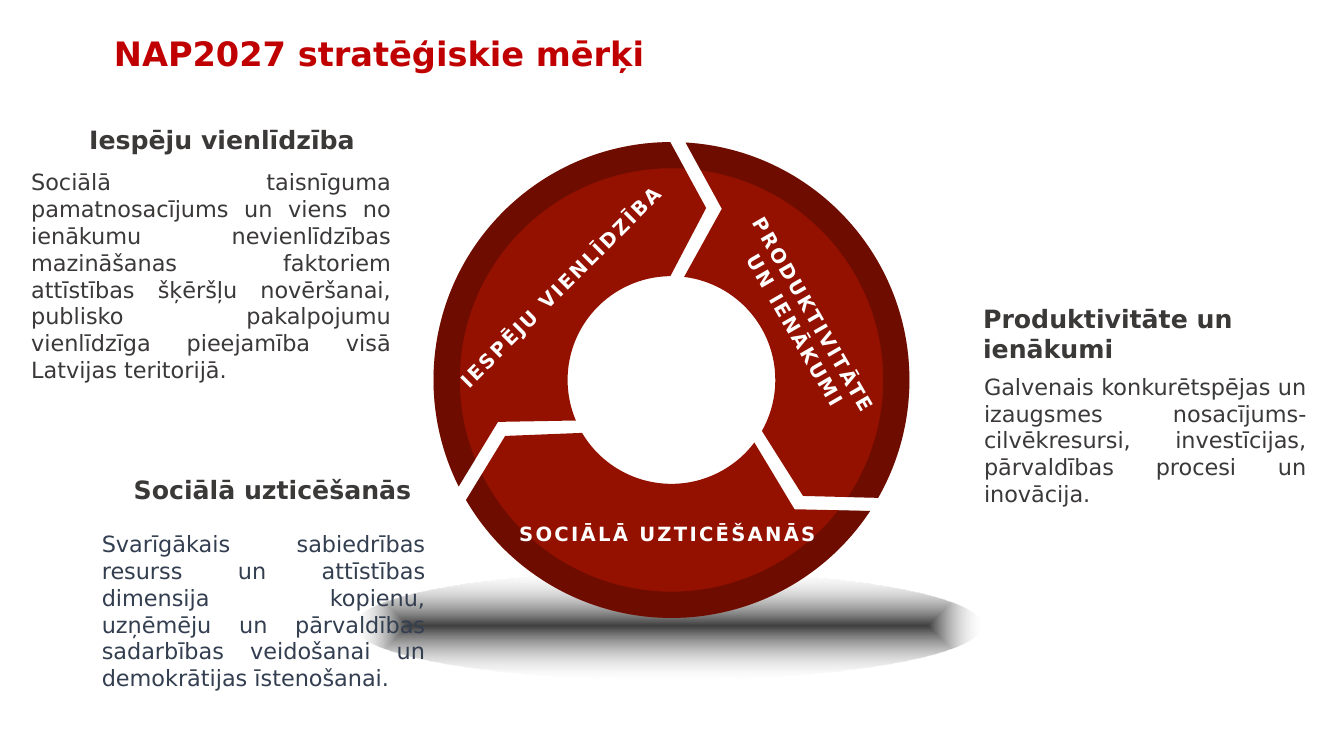
import math

from lxml import etree
from pptx import Presentation
from pptx import util as u
from pptx.dml.color import RGBColor
from pptx.enum import shapes, text
from pptx.oxml import parse_xml
from pptx.oxml.ns import nsdecls, qn

FONT = "DejaVu Sans"
GREY = "3B3838"
RED = "941100"
WHITE = "FFFFFF"
OUTER, RIM, INNER = 2.36, 2.1, 1.03


def rgb(value):
    """Return the colour for a hex string."""
    return RGBColor.from_string(value)


def add_run(p, words, size, color, bold=False, spacing=None):
    """Add one formatted run to a paragraph."""
    r = p.add_run()
    r.text = words
    r.font.name = FONT
    r.font.size = u.Pt(size)
    r.font.bold = bold
    r.font.color.rgb = rgb(color)
    if spacing:
        r._r.get_or_add_rPr().set("spc", str(round(spacing * 100)))


def add_box(parent, box, wrap=True):
    """Add a text box that grows with its text and return it."""
    sp = parent.shapes.add_textbox(*map(u.Inches, box))
    sp.text_frame.word_wrap = wrap
    sp.text_frame.auto_size = text.MSO_AUTO_SIZE.SHAPE_TO_FIT_TEXT
    return sp


def add_title(s, words, box):
    """Place the slide title."""
    sp = s.shapes.title
    sp.left, sp.top, sp.width, sp.height = map(u.Inches, box)
    tf = sp.text_frame
    tf.word_wrap = True
    tf.vertical_anchor = text.MSO_ANCHOR.TOP
    p = tf.paragraphs[0]
    p.alignment = text.PP_ALIGN.LEFT
    p.line_spacing = 0.9
    add_run(p, words, 24, "C00000", True)


def add_goal(s, heading, body, heading_box, body_box, align, color=GREY):
    """Add a grouped heading and justified description."""
    group = s.shapes.add_group_shape()
    parts = (
        (heading, heading_box, align, text.MSO_ANCHOR.BOTTOM, 18, GREY, True),
        (body, body_box, text.PP_ALIGN.JUSTIFY, text.MSO_ANCHOR.TOP, 16, color, False),
    )
    for words, box, alignment, anchor, size, ink, bold in parts:
        tf = add_box(group, box).text_frame
        tf.margin_left = tf.margin_right = 0
        tf.vertical_anchor = anchor
        p = tf.paragraphs[0]
        p.alignment = alignment
        add_run(p, words, size, ink, bold)


def add_shadow(s, box):
    """Add the soft ellipse under the wheel."""
    sp = s.shapes.add_shape(shapes.MSO_SHAPE.OVAL, *map(u.Inches, box))
    sp.shadow.inherit = False
    sp.line.fill.background()
    sp.fill.background()
    no_fill = sp._element.spPr.find(qn("a:noFill"))
    gradient = parse_xml(
        f'<a:gradFill {nsdecls("a")} rotWithShape="1"><a:gsLst>'
        '<a:gs pos="0"><a:srgbClr val="404040"/></a:gs>'
        '<a:gs pos="100000"><a:srgbClr val="E7E6E6"><a:alpha val="0"/></a:srgbClr></a:gs>'
        '</a:gsLst><a:path path="shape">'
        '<a:fillToRect l="50000" t="50000" r="50000" b="50000"/></a:path></a:gradFill>'
    )
    sp._element.spPr.replace(no_fill, gradient)


def polar(radius, degrees):
    """Return a point, with degrees clockwise from the top."""
    a = math.radians(degrees)
    return radius * math.sin(a), -radius * math.cos(a)


def arc(radius, start, end):
    """Return a first point and then Bézier triples, split at quarter turns."""
    low, high = sorted((start, end))
    cuts = [start, *sorted((q for q in range(0, 361, 90) if low < q < high),
                           reverse=start > end), end]
    steps = [(polar(radius, start),)]
    for a, b in zip(cuts, cuts[1:]):
        k = 4 / 3 * math.tan(math.radians(b - a) / 4)
        (x0, y0), (x1, y1) = polar(radius, a), polar(radius, b)
        steps.append(((x0 - k * y0, y0 + k * x0), (x1 + k * y1, y1 - k * x1), (x1, y1)))
    return steps


def add_outline(group, center, steps, color, alpha=None):
    """Add a filled outline of straight steps and Bézier triples."""
    points = [(u.Inches(center[0] + x), u.Inches(center[1] + y))
              for step in steps for x, y in step]
    builder = group.shapes.build_freeform(*points[0])
    builder.add_line_segments(points[1:], close=True)
    sp = builder.convert_to_shape()
    lines = iter(list(sp._element.spPr.iter(qn("a:lnTo"))))
    for step in steps[1:]:
        line = next(lines)
        if len(step) == 3:
            line.tag = qn("a:cubicBezTo")
            for extra in (next(lines), next(lines)):
                line.append(extra[0])
                extra.getparent().remove(extra)
    sp.shadow.inherit = False
    sp.line.fill.background()
    sp.fill.solid()
    sp.fill.fore_color.rgb = rgb(color)
    if alpha:
        clr = sp._element.spPr.find(qn("a:solidFill"))[0]
        etree.SubElement(clr, qn("a:alpha")).set("val", str(alpha * 1000))


def segment(turn):
    """Return the outline of one ring segment."""
    return (arc(OUTER, turn + 3.4, turn + 119.7) + [(polar(1.74, turn + 131.4),)]
            + arc(INNER, turn + 119.4, turn + 7) + [(polar(1.77, turn + 16.4),)])


def rim(turn):
    """Return the outline of one darker rim piece."""
    return arc(OUTER, turn + 3.4, turn + 119.7) + arc(RIM, turn + 123.6, turn + 7.9)


def add_wheel(s, box):
    """Add three interlocking ring segments with a darker rim."""
    left, top, width, height = box
    center = left + width / 2, top + height / 2
    group = s.shapes.add_group_shape()
    for outline, color, alpha in ((segment, RED, None), (rim, "000000", 25)):
        for turn in (240, 0, 120):
            add_outline(group, center, outline(turn), color, alpha)


def add_label(s, lines, box, rotation):
    """Add a spaced white label on a ring segment."""
    sp = add_box(s, box, wrap=False)
    sp.rotation = rotation
    tf = sp.text_frame
    for i, line in enumerate(lines):
        p = tf.add_paragraph() if i else tf.paragraphs[0]
        p.alignment = text.PP_ALIGN.CENTER
        add_run(p, line, 14, WHITE, True, 1.6)


def main():
    """Build and save the slide."""
    prs = Presentation()
    prs.slide_width, prs.slide_height = u.Inches(13.33), u.Inches(7.5)
    s = prs.slides.add_slide(prs.slide_layouts[5])
    add_title(s, "NAP2027 stratēģiskie mērķi", (1.03, 0.32, 11.5, 0.81))
    add_shadow(s, (3.52, 5.67, 6.21, 1.07))
    add_wheel(s, (4.3, 1.41, 4.72, 4.72))
    add_goal(s, "Produktivitāte un ienākumi",
             "Galvenais konkurētspējas un izaugsmes nosacījums- cilvēkresursi, "
             "investīcijas, pārvaldības procesi un inovācija.",
             (9.75, 2.95, 3.21, 0.71), (9.76, 3.65, 3.2, 1.45), text.PP_ALIGN.LEFT)
    add_goal(s, "Sociālā uzticēšanās",
             "Svarīgākais sabiedrības resurss un attīstības dimensija kopienu, "
             "uzņēmēju un pārvaldības sadarbības veidošanai un demokrātijas īstenošanai.",
             (0.87, 4.66, 3.21, 0.4), (1.01, 5.21, 3.21, 1.72), text.PP_ALIGN.RIGHT, "333F50")
    add_goal(s, "Iespēju vienlīdzība",
             "Sociālā taisnīguma pamatnosacījums un viens no ienākumu nevienlīdzības "
             "mazināšanas faktoriem attīstības šķēršļu novēršanai, publisko pakalpojumu "
             "vienlīdzīga pieejamība visā Latvijas teritorijā. ",
             (0.31, 1.18, 3.21, 0.4), (0.31, 1.62, 3.57, 2.26), text.PP_ALIGN.RIGHT)
    add_label(s, ["IESPĒJU VIENLĪDZĪBA"], (4, 2.68, 3.12, 0.34), 315)
    add_label(s, ["SOCIĀLĀ UZTICĒŠANĀS"], (5, 5.13, 3.24, 0.34), 0)
    add_label(s, ["PRODUKTIVITĀTE ", "UN IENĀKUMI"], (6.69, 2.93, 2.59, 0.57), 60)
    prs.save("out.pptx")


if __name__ == "__main__":
    main()
